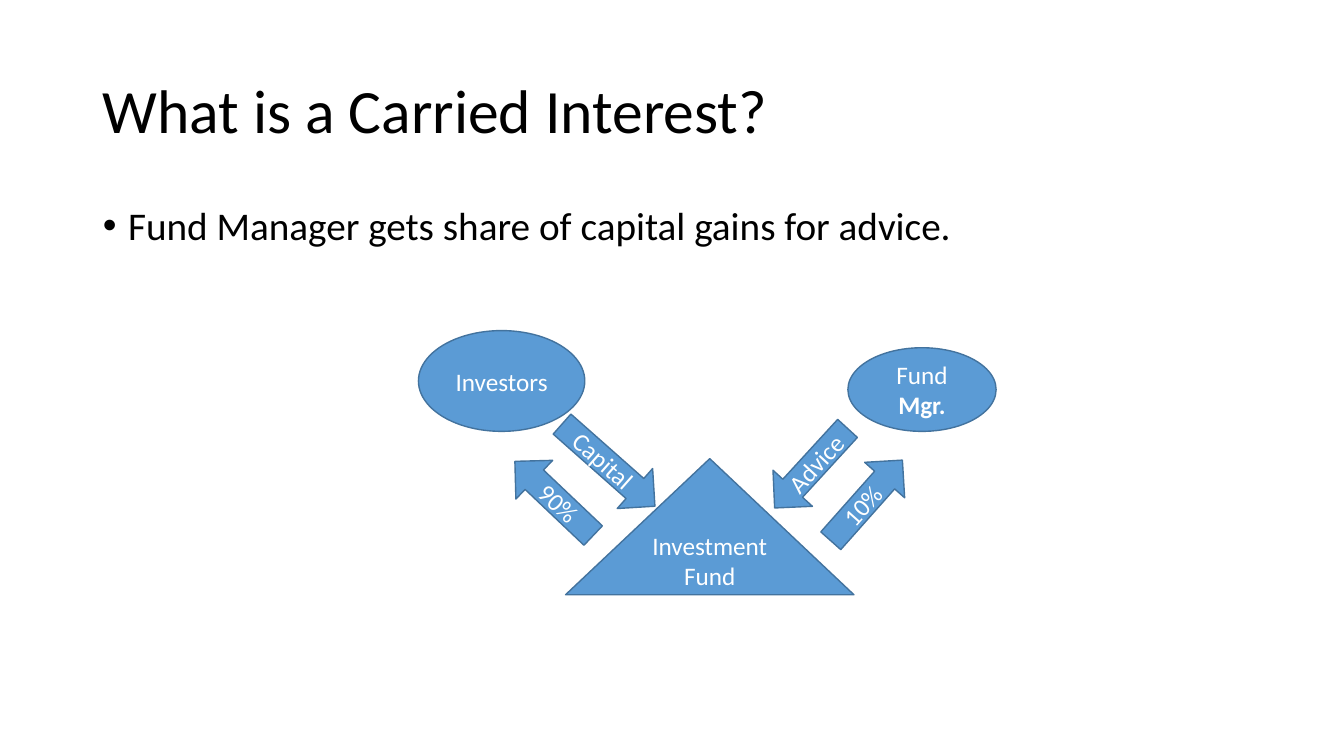
import pptx
import pptx.util
import pptx.dml.color
import pptx.enum.shapes
import pptx.enum.text

PX = 9144  # 100 px to the inch
SHAPE = pptx.enum.shapes.MSO_SHAPE
ALIGN = pptx.enum.text.PP_ALIGN
ANCHOR = pptx.enum.text.MSO_ANCHOR
COLORS = {"text": "000000", "fill": "5B9BD5", "line": "43739E", "label": "FFFFFF"}


def rgb(name):
    return pptx.dml.color.RGBColor.from_string(COLORS[name])


def apply(obj, values):
    for name, value in values.items():
        setattr(obj, name, value)


class Deck:
    font = "Calibri"

    def __init__(self, width, height):
        self.prs = pptx.Presentation()
        apply(self.prs, {"slide_width": width * PX, "slide_height": height * PX})
        self.s = self.prs.slides.add_slide(self.prs.slide_layouts[1])

    def run(self, p, text, size, color, bold=False):
        r = p.add_run()
        r.text = text
        apply(r.font, {"name": self.font, "size": pptx.util.Pt(size), "bold": bold})
        r.font.color.rgb = rgb(color)

    def placeholder(self, idx, box, text, size, anchor, before=0):
        sp = self.s.placeholders[idx]
        apply(sp, dict(zip(("left", "top", "width", "height"), (v * PX for v in box))))
        tf = sp.text_frame
        apply(tf, {"word_wrap": True, "vertical_anchor": anchor,
                   "auto_size": pptx.enum.text.MSO_AUTO_SIZE.NONE})
        p = tf.paragraphs[0]
        apply(p, {"alignment": ALIGN.LEFT, "line_spacing": 0.9,
                  "space_before": pptx.util.Pt(before)})
        self.run(p, text, size, "text")
        return p

    def title(self, box, text):
        self.placeholder(0, box, text, 44, ANCHOR.MIDDLE)

    def bullet(self, box, text):
        p = self.placeholder(1, box, text, 28, ANCHOR.TOP, before=10)
        pPr = p._p.get_or_add_pPr()
        pPr.set("marL", str(25 * PX))
        pPr.set("indent", str(-25 * PX))

    def shape(self, kind, box, text, bold="", rotation=0):
        """Add a filled shape with a centred label; bold is the label's bold ending."""
        sp = self.s.shapes.add_shape(kind, *(v * PX for v in box))
        sp.rotation = rotation
        sp.shadow.inherit = False
        sp.fill.solid()
        sp.fill.fore_color.rgb = rgb("fill")
        sp.line.color.rgb = rgb("line")
        sp.line.width = pptx.util.Pt(1)
        tf = sp.text_frame
        apply(tf, {"word_wrap": True, "vertical_anchor": ANCHOR.MIDDLE})
        p = tf.paragraphs[0]
        p.alignment = ALIGN.CENTER
        self.run(p, text, 18, "label")
        if bold:
            self.run(p, bold, 18, "label", bold=True)


def main():
    deck = Deck(1333, 750)
    deck.title((92, 40, 1150, 145), "What is a Carried Interest?")
    deck.bullet((92, 200, 1150, 476),
                "Fund Manager gets share of capital gains for advice.")

    deck.shape(SHAPE.ISOSCELES_TRIANGLE, (561, 455, 286, 135), "Investment Fund")
    deck.shape(SHAPE.OVAL, (415, 328, 165, 100), "Investors")
    deck.shape(SHAPE.OVAL, (841, 345, 147, 83), "Fund ", bold="Mgr.")

    flows = [
        ("Capital", SHAPE.RIGHT_ARROW, 542, 435, 123, 41.5),
        ("Advice", SHAPE.LEFT_ARROW, 751, 438, 107, 312.5),
        ("10%", SHAPE.RIGHT_ARROW, 806, 470, 107, 311.6),
        ("90%", SHAPE.LEFT_ARROW, 496, 468, 107, 43.5),
    ]
    for text, kind, left, top, width, rotation in flows:
        deck.shape(kind, (left, top, width, 53), text, rotation=rotation)

    deck.prs.save("out.pptx")


if __name__ == "__main__":
    main()
